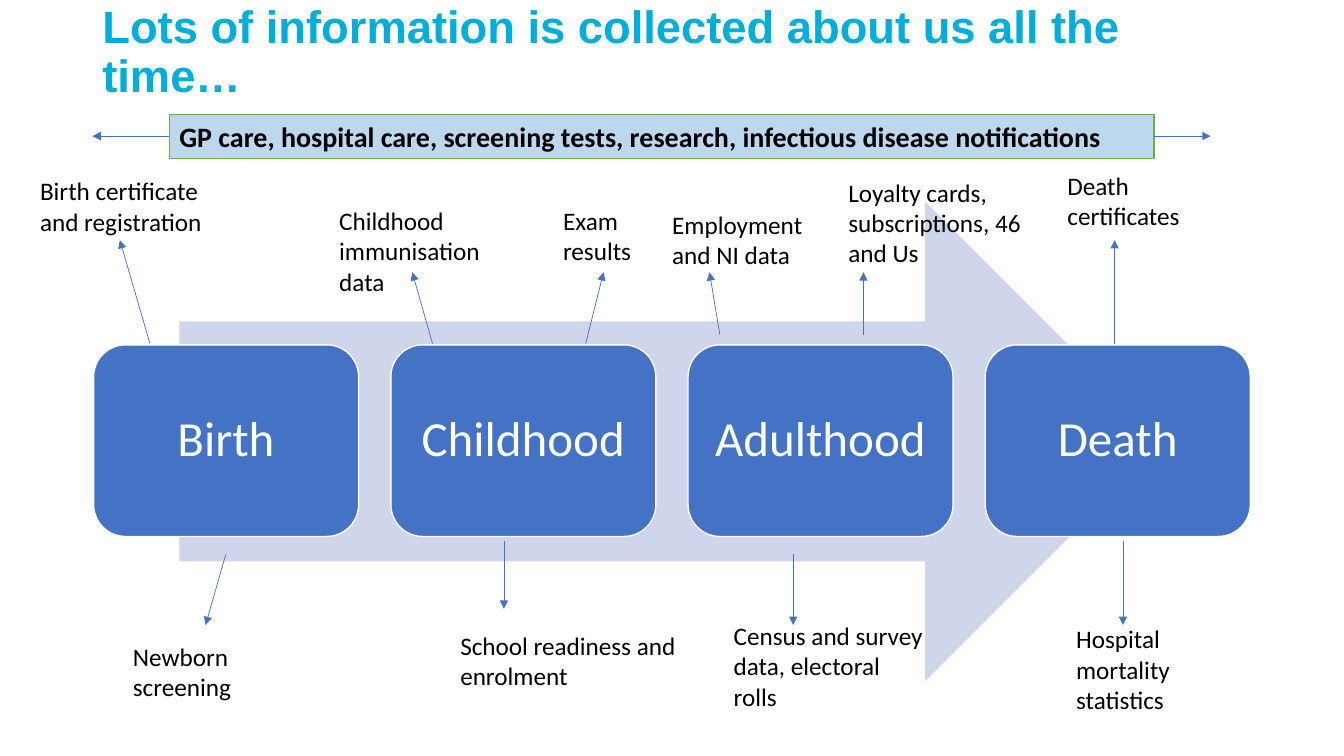
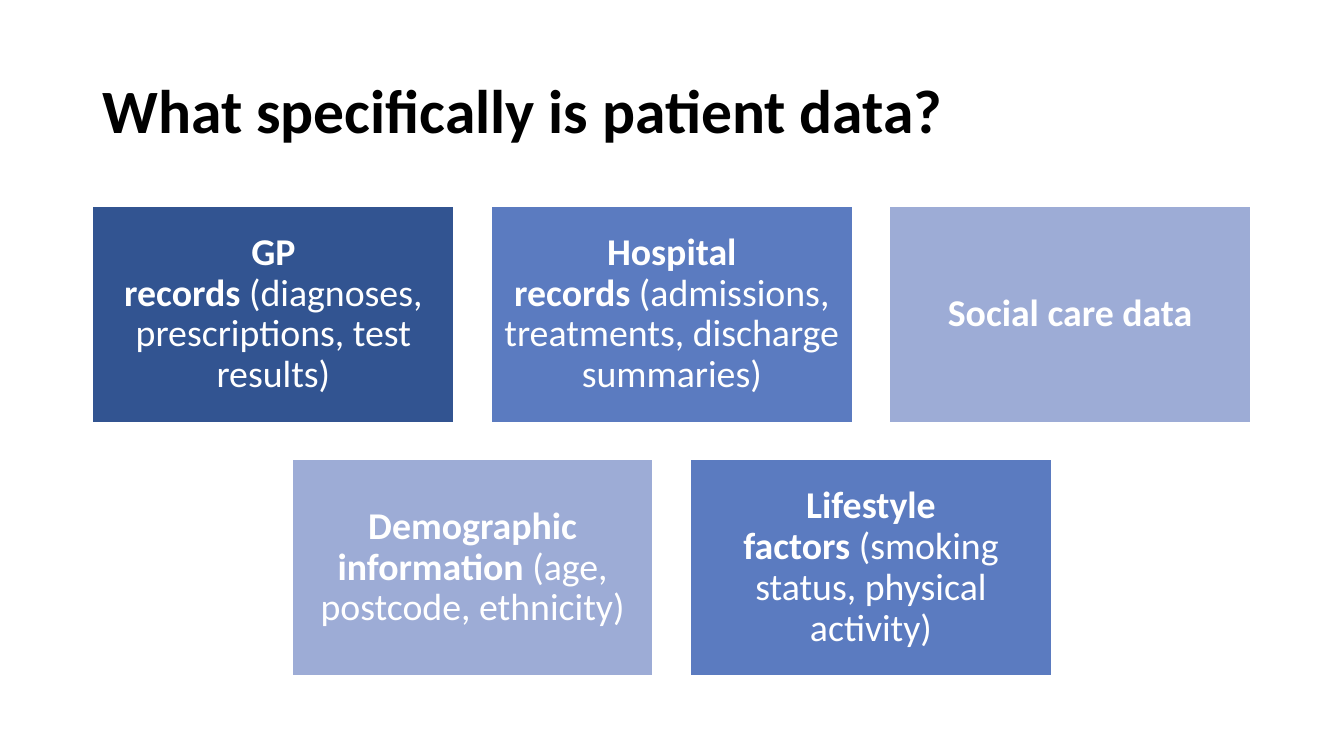
from pptx import Presentation
from pptx import util as u
from pptx.dml.color import RGBColor
from pptx.enum import shapes, text
from pptx.oxml import parse_xml
from pptx.oxml.ns import nsdecls

# Shared style
COLOURS = {
    "title": "00AED9", "black": "000000", "white": "FFFFFF",
    "blue": "4472C4", "arrow": "CFD5EA",
    "banner": "BDD7EE", "banner_line": "70AD47",
    "dark": "325491", "mid": "5B7BC0", "light": "9DACD6",
}
BODY, HEADING = "Calibri", "Arial"
MARGIN = 2.33
BOX = shapes.MSO_SHAPE
ALIGN = text.PP_ALIGN
ANCHOR = text.MSO_ANCHOR
HARD_SPACE = chr(160)  # keeps the bracket with the word before it

# Stage cards: left, top, width, height, step
STAGES = ["Birth", "Childhood", "Adulthood", "Death"]
CARD_LEFT, CARD_TOP, CARD_W, CARD_H, CARD_STEP = 2.36, 8.69, 6.68, 4.83, 7.49

# Data sources: wording, lines, (left, top, width), arrow start, arrow end
SOURCES = [
    ("Birth certificate and registration", 2, (0.76, 4.3, 4.67), (3.78, 8.66), (3.02, 6.05)),
    ("Newborn screening", 2, (3.1, 16.03, 4.34), (5.69, 13.97), (5.18, 15.75)),
    ("Childhood immunisation data", 3, (8.3, 5.05, 4.67), (10.9, 8.66), (10.39, 6.86)),
    ("School readiness and enrolment", 2, (11.35, 15.75, 5.94), (12.7, 13.64), (12.7, 15.34)),
    ("Exam results", 2, (13.94, 5.05, 2.95), (14.76, 8.66), (15.21, 6.86)),
    ("Employment and NI data", 2, (16.69, 5.15, 3.81), (18.14, 8.43), (17.88, 6.86)),
    ("Census and survey data, electoral rolls", 3, (18.24, 15.51, 5.31), (19.99, 13.97), (19.99, 15.75)),
    ("Loyalty cards, subscriptions, 46 and Us", 3, (21.13, 4.34, 5.28), (21.76, 8.43), (21.76, 6.86)),
    ("Death certificates", 2, (26.65, 4.17, 4.47), (28.09, 8.66), (28.09, 6.05)),
    ("Hospital mortality statistics", 3, (26.87, 15.59, 4.24), (28.3, 13.64), (28.3, 15.75)),
]

# Kinds of patient data, row by row: name, examples, fill
TILE_ROWS = [
    [("GP records", "(diagnoses, prescriptions, test results)", "dark"),
     ("Hospital records", "(admissions, treatments, discharge summaries)", "mid"),
     ("Social care data", "", "light")],
    [("Demographic information", "(age, postcode, ethnicity)", "light"),
     ("Lifestyle factors", "(smoking status, physical activity)", "mid")],
]
TILE_TOP, TILE_W, TILE_H, TILE_STEP, ROW_STEP = 5.18, 9.12, 5.48, 10.04, 6.39


def rgb(name):
    return RGBColor.from_string(COLOURS[name])


def write(shape, parts, size, colour="black", face=BODY, align=ALIGN.LEFT,
          anchor=ANCHOR.TOP, spacing=None, inset=None):
    """Write (wording, bold) parts as one paragraph."""
    frame = shape.text_frame
    frame.word_wrap = True
    frame.vertical_anchor = anchor
    if inset is not None:
        frame.margin_left = frame.margin_right = u.Cm(inset)
        frame.margin_top = frame.margin_bottom = u.Cm(inset)
    paragraph = frame.paragraphs[0]
    paragraph.alignment = align
    if spacing:
        paragraph.line_spacing = spacing
    for wording, bold in parts:
        run = paragraph.add_run()
        run.text = wording
        run.font.name, run.font.size, run.font.bold = face, u.Pt(size), bold
        run.font.color.rgb = rgb(colour)


def add_label(slide, place, parts, size, **style):
    label = slide.shapes.add_textbox(*map(u.Cm, place))
    write(label, parts, size, **style)


def add_title(slide, wording, place, size, **style):
    add_label(slide, place, [(wording, True)], size,
              anchor=ANCHOR.MIDDLE, spacing=0.9, **style)


def add_box(slide, kind, place, fill, line=None, weight=1):
    box = slide.shapes.add_shape(kind, *map(u.Cm, place))
    box.shadow.inherit = False
    box.fill.solid()
    box.fill.fore_color.rgb = rgb(fill)
    if line:
        box.line.color.rgb = rgb(line)
        box.line.width = u.Pt(weight)
    else:
        box.line.fill.background()
    return box


def add_arrow(slide, start, end):
    arrow = slide.shapes.add_connector(
        shapes.MSO_CONNECTOR.STRAIGHT, *map(u.Cm, start + end))
    arrow.line.color.rgb = rgb("blue")
    arrow.line.width = u.Pt(0.5)
    arrow.line._get_or_add_ln().append(
        parse_xml(f'<a:tailEnd {nsdecls("a")} type="triangle"/>'))
    arrow._element.spPr.append(parse_xml(f'<a:effectLst {nsdecls("a")}/>'))


def build_life_course(slide):
    add_title(slide, "Lots of information is collected about us all the time…",
              (MARGIN, 0.08, 29.92, 2.54), 32.4, colour="title", face=HEADING)

    # Life stages on the broad arrow
    add_box(slide, BOX.RIGHT_ARROW, (4.52, 5.08, 24.84, 12.09), "arrow")
    for i, stage in enumerate(STAGES):
        card = add_box(slide, BOX.ROUNDED_RECTANGLE,
                       (CARD_LEFT + i * CARD_STEP, CARD_TOP, CARD_W, CARD_H),
                       "blue", "white")
        write(card, [(stage, False)], 35, colour="white", align=ALIGN.CENTER,
              anchor=ANCHOR.MIDDLE, spacing=0.9, inset=0.4)

    # Data collected at each stage
    for wording, lines, place, start, end in SOURCES:
        add_arrow(slide, start, end)
        add_label(slide, place + (0.26 + 0.77 * lines,), [(wording, False)], 18)

    # Banner for data collected throughout life
    left, right, middle = 4.27, 29.08, 3.43
    banner = add_box(slide, BOX.RECTANGLE, (left, 2.88, right - left, 1.11),
                     "banner", "banner_line")
    write(banner, [("GP care, hospital care, screening tests, research, "
                    "infectious disease notifications", True)], 20,
          anchor=ANCHOR.MIDDLE)
    add_arrow(slide, (right, middle), (30.51, middle))
    add_arrow(slide, (left, middle), (MARGIN, middle))


def build_patient_data(slide):
    add_title(slide, "What specifically is patient data?",
              (MARGIN, 1.02, 29.21, 3.68), 44)

    # Tiles, with the shorter row centred
    for r, row in enumerate(TILE_ROWS):
        left = MARGIN + (len(TILE_ROWS[0]) - len(row)) * TILE_STEP / 2
        for c, (name, examples, fill) in enumerate(row):
            tile = add_box(slide, BOX.RECTANGLE,
                           (left + c * TILE_STEP, TILE_TOP + r * ROW_STEP,
                            TILE_W, TILE_H), fill, "white", 1.5)
            parts = [(name, True)]
            if examples:
                parts.append((HARD_SPACE + examples, False))
            write(tile, parts, 27, colour="white", align=ALIGN.CENTER,
                  anchor=ANCHOR.MIDDLE, spacing=0.9, inset=0.28)


def main():
    deck = Presentation()
    deck.slide_width, deck.slide_height = u.Cm(33.87), u.Cm(19.05)
    blank = deck.slide_layouts[6]
    for build in (build_life_course, build_patient_data):
        build(deck.slides.add_slide(blank))
    deck.save("out.pptx")


if __name__ == "__main__":
    main()
